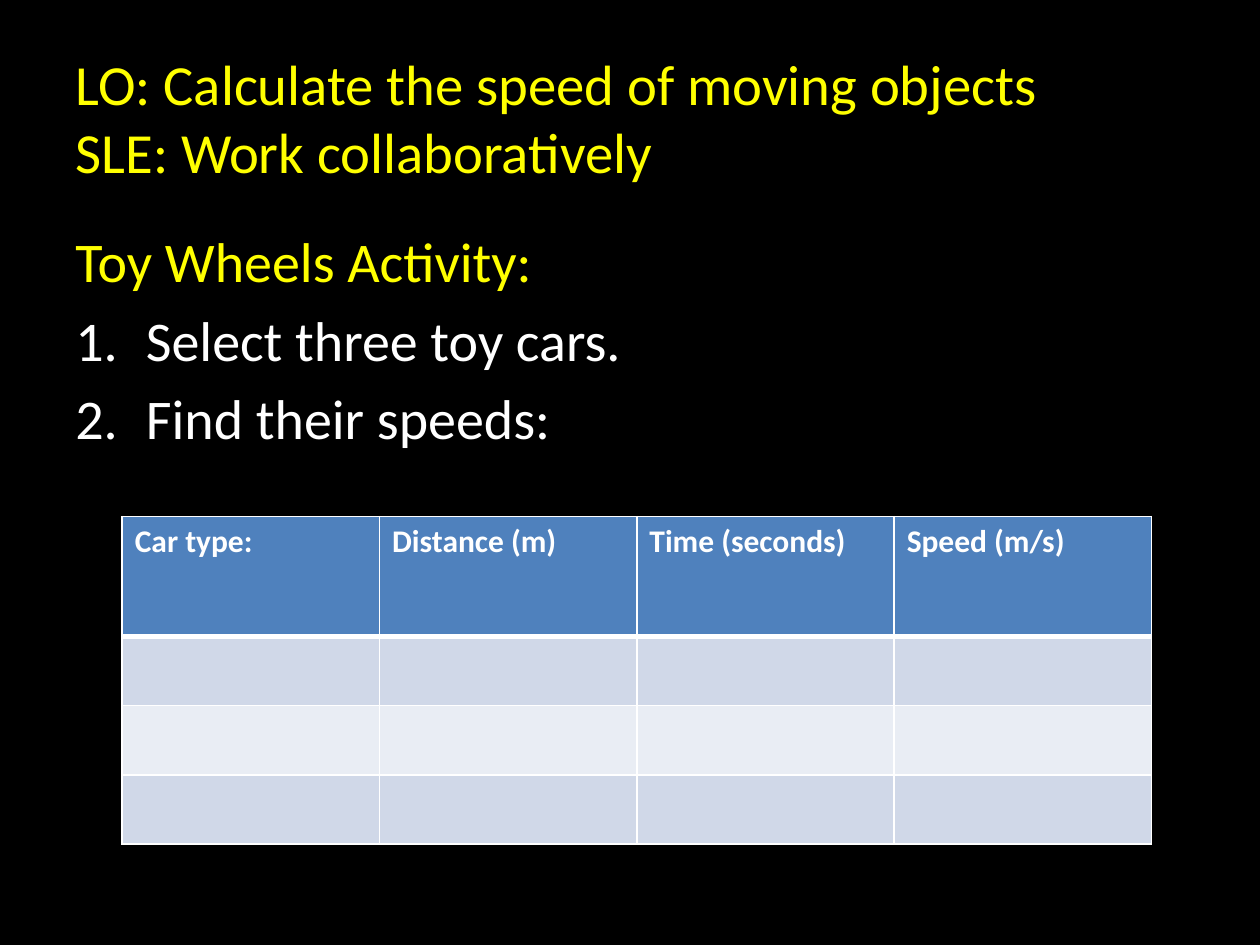
from dataclasses import dataclass

from lxml.etree import SubElement
from pptx import Presentation
from pptx.dml.color import RGBColor
from pptx.enum.text import MSO_ANCHOR, MSO_AUTO_SIZE, PP_ALIGN
from pptx.oxml import parse_xml
from pptx.oxml.ns import nsdecls, qn
from pptx.util import Inches, Pt


@dataclass(frozen=True)
class Theme:
    font: str = "Calibri"
    background: str = "000000"
    accent: str = "FFFF00"
    light: str = "FFFFFF"
    header_fill: str = "4F81BD"
    band_fills: tuple = ("D0D8E8", "E9EDF4")
    title_size: float = 32.4
    body_size: float = 32
    table_size: float = 18
    thin_line: float = 1
    thick_line: float = 3


class SlideBuilder:
    def __init__(self, slide, theme):
        self.slide = slide
        self.theme = theme

    def set_background(self):
        fill = self.slide.background.fill
        fill.solid()
        fill.fore_color.rgb = RGBColor.from_string(self.theme.background)

    def format_font(self, font, size, color, bold=False):
        for name, value in {"name": self.theme.font, "size": Pt(size), "bold": bold}.items():
            setattr(font, name, value)
        font.color.rgb = RGBColor.from_string(color)

    def place(self, shape, left, top, width, height):
        bounds = {"left": left, "top": top, "width": width, "height": height}
        for name, value in bounds.items():
            setattr(shape, name, Inches(value))

    def add_title(self, text, bounds):
        title = self.slide.shapes.title
        self.place(title, *bounds)
        frame = title.text_frame
        frame.text = text
        frame.auto_size = MSO_AUTO_SIZE.NONE
        frame.vertical_anchor = MSO_ANCHOR.MIDDLE
        paragraph = frame.paragraphs[0]
        paragraph.alignment = PP_ALIGN.LEFT
        for run in paragraph.runs:
            self.format_font(run.font, self.theme.title_size, self.theme.accent)

    def add_steps(self, heading, steps, bounds):
        box = self.slide.shapes.add_textbox(*map(Inches, bounds))
        frame = box.text_frame
        frame.word_wrap = True
        frame.text = "\n".join([heading, *steps])
        for index, paragraph in enumerate(frame.paragraphs):
            paragraph.space_before = Pt(self.theme.body_size * 0.2)
            color = self.theme.light if index else self.theme.accent
            self.format_font(paragraph.runs[0].font, self.theme.body_size, color)
            if index:
                self.number(paragraph)

    def number(self, paragraph):
        indent = Inches(0.56)
        properties = paragraph._p.get_or_add_pPr()
        properties.set("marL", str(indent))
        properties.set("indent", str(-indent))
        SubElement(properties, qn("a:buFont"), typeface="+mj-lt")
        SubElement(properties, qn("a:buAutoNum"), type="arabicPeriod")

    def add_table(self, headers, row_heights, bounds):
        theme = self.theme
        frame = self.slide.shapes.add_table(
            len(row_heights), len(headers), *map(Inches, bounds))
        table = frame.table
        for row, height in zip(table.rows, row_heights):
            row.height = Inches(height)
        for cell, header in zip(table.rows[0].cells, headers):
            cell.text = header
            run = cell.text_frame.paragraphs[0].runs[0]
            self.format_font(run.font, theme.table_size, theme.light, bold=True)
        for index, row in enumerate(table.rows):
            fill = theme.band_fills[(index - 1) % 2] if index else theme.header_fill
            for cell in row.cells:
                cell.fill.solid()
                cell.fill.fore_color.rgb = RGBColor.from_string(fill)
                self.add_borders(cell, index)

    def add_borders(self, cell, row_index):
        # The rule between header and body is thicker than the grid
        thin, thick = self.theme.thin_line, self.theme.thick_line
        widths = {
            "lnL": thin,
            "lnR": thin,
            "lnT": thick if row_index == 1 else thin,
            "lnB": thick if row_index == 0 else thin,
        }
        properties = cell._tc.get_or_add_tcPr()
        for position, (side, width) in enumerate(widths.items()):
            properties.insert(position, parse_xml(
                f'<a:{side} {nsdecls("a")} w="{Pt(width)}"><a:solidFill>'
                f'<a:srgbClr val="{self.theme.light}"/></a:solidFill></a:{side}>'))


def main():
    presentation = Presentation()
    presentation.slide_width = Inches(10)
    presentation.slide_height = Inches(7.5)
    title_only = presentation.slide_layouts.get_by_name("Title Only")
    builder = SlideBuilder(presentation.slides.add_slide(title_only), Theme())
    builder.set_background()

    # Learning objectives
    builder.add_title(
        "LO: Calculate the speed of moving objects\vSLE: Work collaboratively",
        (0.5, 0.3, 9, 1.25))

    # Activity instructions
    builder.add_steps(
        "Toy Wheels Activity:",
        ["Select three toy cars.", "Find their speeds:"],
        (0.5, 1.75, 9, 4.95))

    # Results table with blank rows to fill in
    builder.add_table(
        ["Car type:", "Distance (m)", "Time (seconds)", "Speed (m/s)"],
        [0.95] + [0.55] * 3,
        (0.97, 4.1, 8.17, 2.6))

    presentation.save("out.pptx")


if __name__ == "__main__":
    main()
